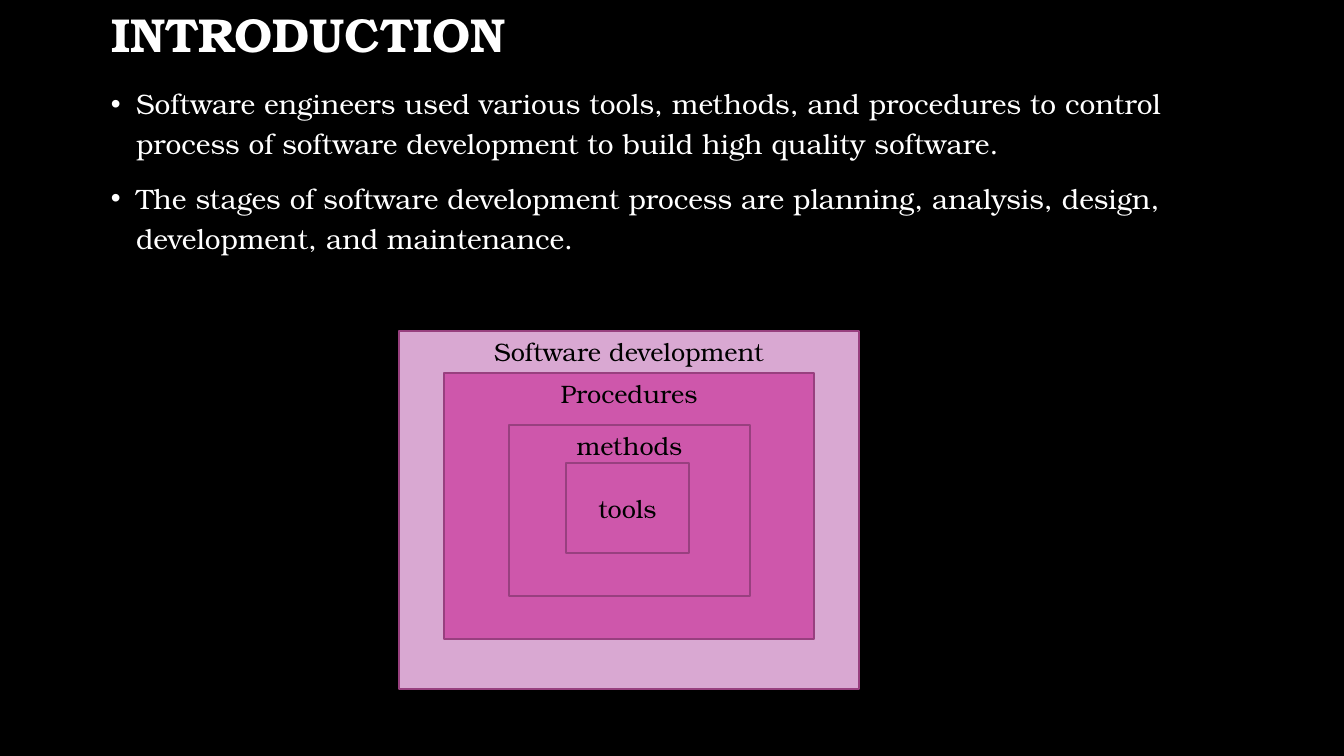
from pptx import Presentation
from pptx import util as u
from pptx.dml.color import RGBColor
from pptx.enum import shapes, text
from lxml import etree

SCALE = u.Inches(1) / 100.8
FONT = "TeX Gyre Bonum"


def px(*lengths):
    return [round(length * SCALE) for length in lengths]


def style(font, size, colour, bold=False):
    font.name = FONT
    font.size = u.Pt(size)
    font.bold = bold
    font.color.rgb = RGBColor.from_string(colour)


presentation = Presentation()
presentation.slide_width, presentation.slide_height = px(1344, 756)
slide = presentation.slides.add_slide(presentation.slide_layouts[5])
slide.background.fill.solid()
slide.background.fill.fore_color.rgb = RGBColor.from_string("000000")

title = slide.shapes.title
title.left, title.top, title.width, title.height = px(101, 0, 1141, 75)
title.text_frame.text = "INTRODUCTION"
title.text_frame.vertical_anchor = text.MSO_ANCHOR.MIDDLE
paragraph = title.text_frame.paragraphs[0]
paragraph.alignment = text.PP_ALIGN.LEFT
paragraph.line_spacing = 0.9
style(paragraph.font, 34, "FFFFFF", bold=True)

body = slide.shapes.add_textbox(*px(101, 75, 1141, 626))
body.text_frame.word_wrap = True
points = [
    "Software engineers used various tools, methods, and procedures to control process of software development to build high quality software.",
    "The stages of software development process are planning, analysis, design, development, and maintenance.",
]
body.text_frame.text = "\n".join(points)
for index, paragraph in enumerate(body.text_frame.paragraphs):
    paragraph.line_spacing = 1.2
    paragraph.space_before = u.Pt(10 if index else 0)
    properties = paragraph._p.get_or_add_pPr()
    properties.set("marL", str(u.Inches(0.25)))
    properties.set("indent", str(-u.Inches(0.25)))
    namespace = properties.nsmap["a"]
    etree.SubElement(properties, f"{{{namespace}}}buFont", typeface="Arial")
    etree.SubElement(properties, f"{{{namespace}}}buChar", char="•")
    style(paragraph.font, 20, "FFFFFF")

layers = [
    ("Software development", 399, 331, 460, 358, "D9A8D2", text.MSO_ANCHOR.TOP),
    ("Procedures", 444, 373, 370, 266, "CE57AB", text.MSO_ANCHOR.TOP),
    ("methods", 509, 425, 241, 171, "CE57AB", text.MSO_ANCHOR.TOP),
    ("tools", 566, 463, 123, 90, "CE57AB", text.MSO_ANCHOR.MIDDLE),
]
diagram = slide.shapes.add_group_shape()
for label, left, top, width, height, fill, anchor in layers:
    layer = diagram.shapes.add_shape(
        shapes.MSO_SHAPE.RECTANGLE, *px(left, top, width, height))
    layer.shadow.inherit = False
    layer.fill.solid()
    layer.fill.fore_color.rgb = RGBColor.from_string(fill)
    layer.line.color.rgb = RGBColor.from_string("98407F")
    layer.line.width = u.Pt(1.5)
    layer.text_frame.text = label
    layer.text_frame.word_wrap = True
    layer.text_frame.vertical_anchor = anchor
    paragraph = layer.text_frame.paragraphs[0]
    paragraph.alignment = text.PP_ALIGN.CENTER
    style(paragraph.font, 18, "000000")

presentation.save("out.pptx")
